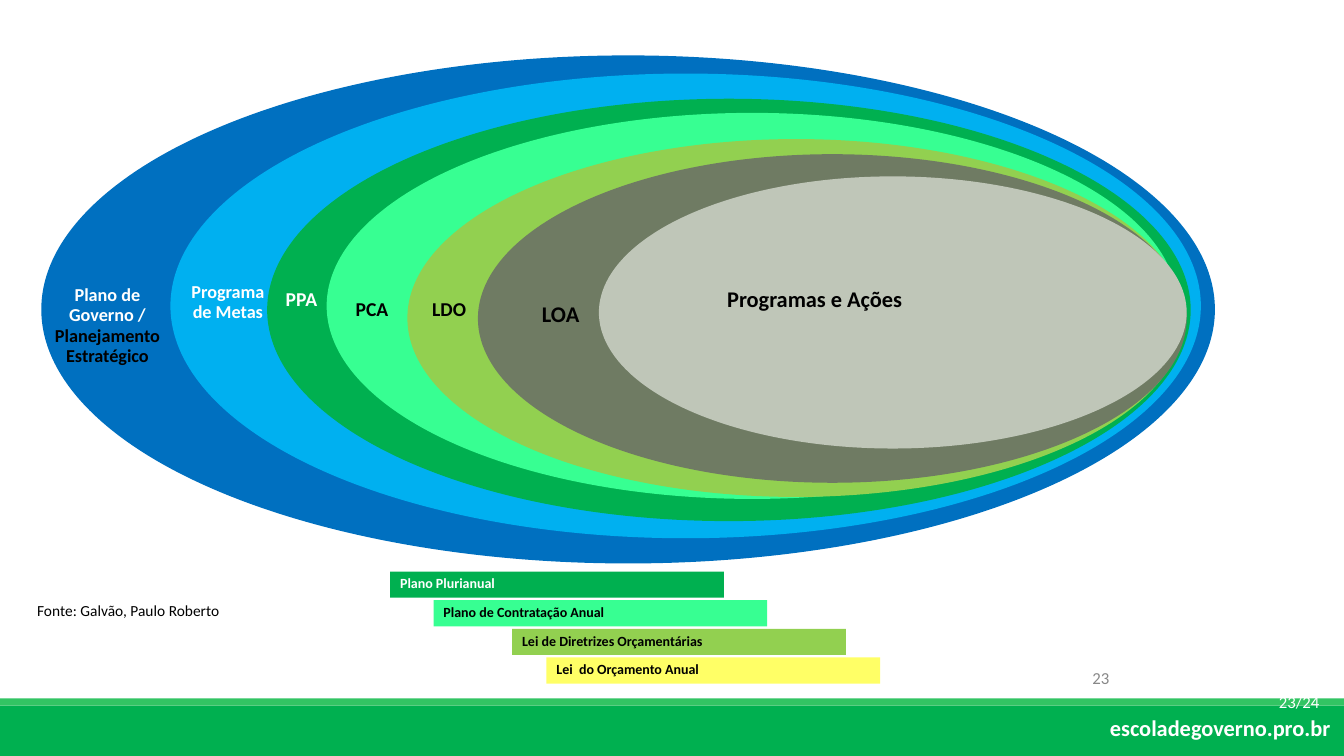
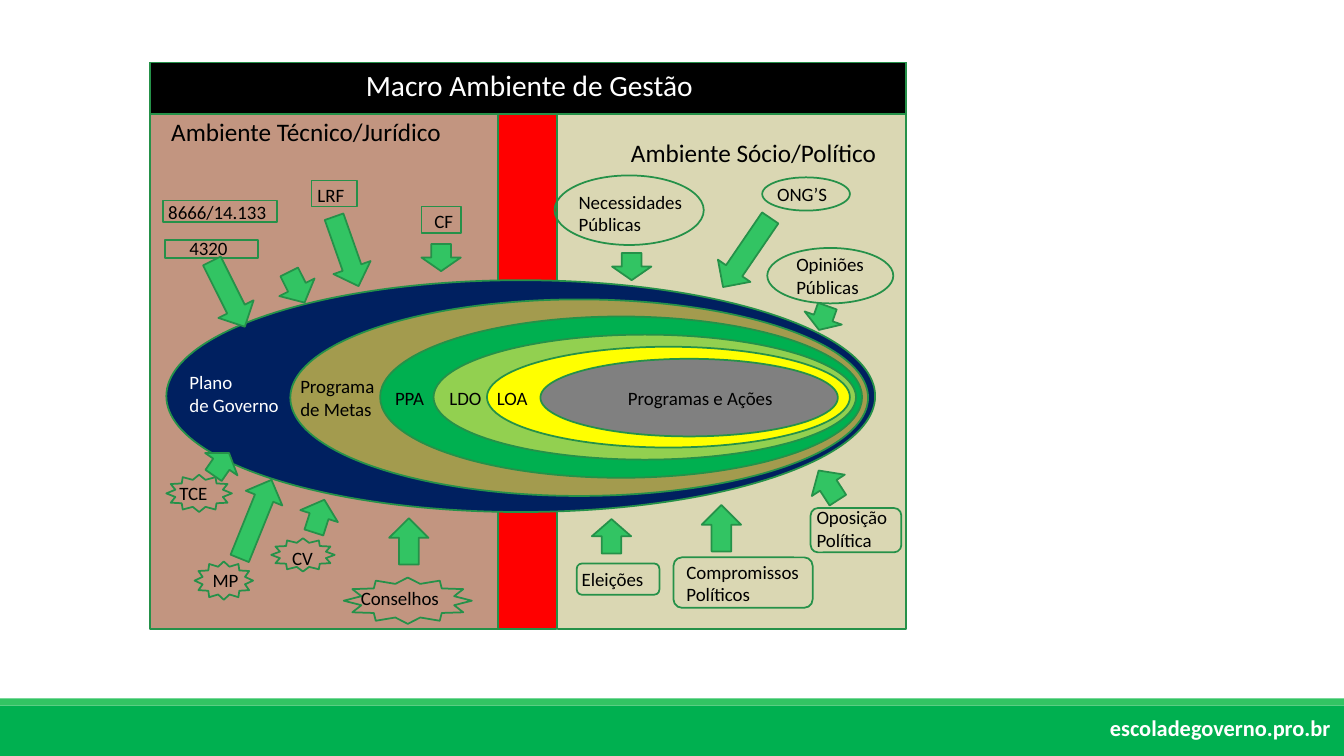
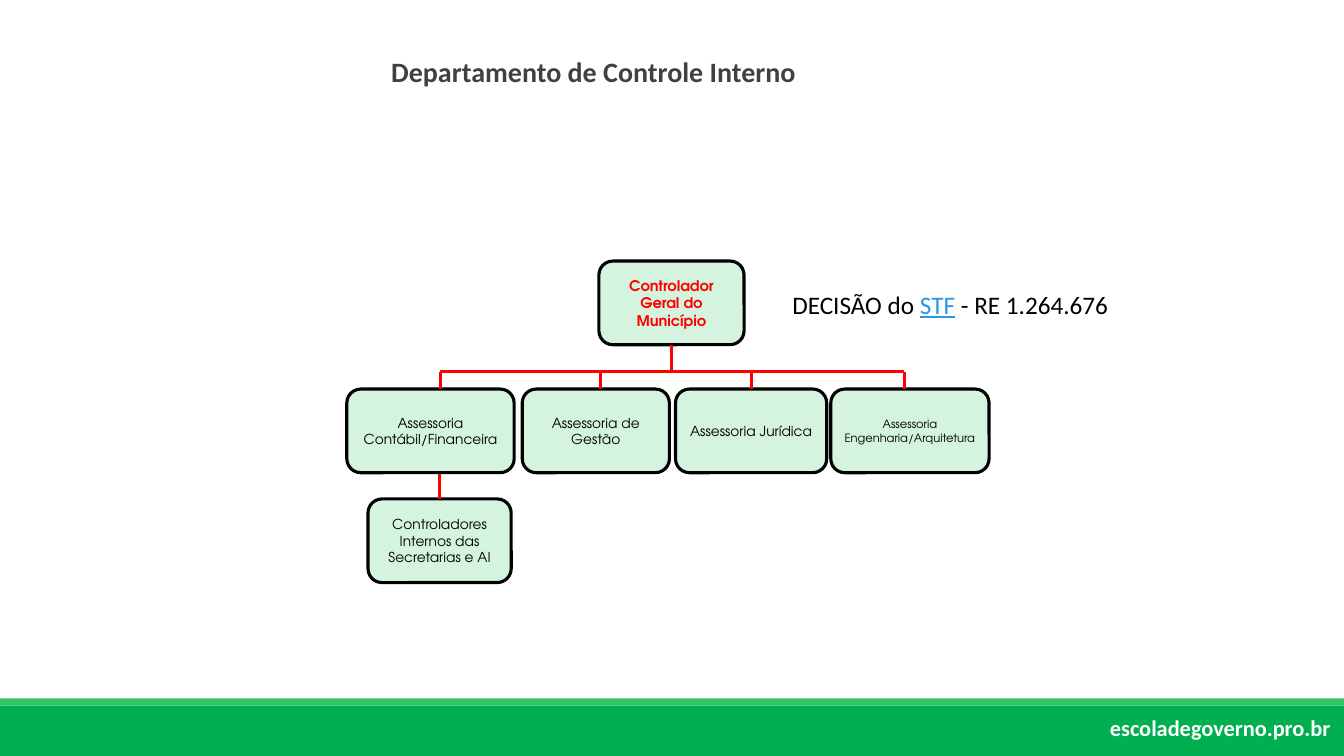
"""Build three slides on municipal planning, its environment and internal control."""
import pptx
import pptx.util
import pptx.dml.color
import pptx.enum.shapes
import pptx.enum.text
import pptx.oxml.ns
import lxml.etree

INK = {
    "white": "FFFFFF", "black": "000000", "gray": "888888", "dark": "404040",
    "green": "00B050", "leaf": "32C463", "edge": "259149", "mint": "37FF92",
    "lime": "92D050", "blue": "0070C0", "sky": "00B0F0", "navy": "002060",
    "moss": "6F7B63", "ash": "BFC6B8", "lemon": "FFFF66", "yellow": "FFFF00",
    "red": "FF0000", "sand": "DAD7B3", "clay": "C29580", "olive": "A39B4E",
    "stone": "808080", "pale": "D5F4DF", "link": "2998E3",
}
COLS, ROWS = 1333, 750
SHAPE = pptx.enum.shapes.MSO_SHAPE
RECT, OVAL, ROUND = SHAPE.RECTANGLE, SHAPE.OVAL, SHAPE.ROUNDED_RECTANGLE
STAR, ARROW = SHAPE.STAR_12_POINT, SHAPE.DOWN_ARROW
LEFT, MID = pptx.enum.text.PP_ALIGN.LEFT, pptx.enum.text.PP_ALIGN.CENTER
TOP, CORE = pptx.enum.text.MSO_ANCHOR.TOP, pptx.enum.text.MSO_ANCHOR.MIDDLE

deck = pptx.Presentation()
deck.slide_width = pptx.util.Inches(13.33)
deck.slide_height = pptx.util.Inches(7.5)
COL, ROW = deck.slide_width / COLS, deck.slide_height / ROWS


def put(slide, text, box, kind=None, fill=None, edge=None, thick=1.25, turn=0,
        size=13.5, tint="black", bold=False, font="Calibri", align=LEFT,
        anchor=TOP, space=None, pad=(10, 5)):
    """Place a shape, text box or title; "|" parts the runs of a list of tints."""
    x, y, w, h = box
    place = [int(n) for n in (x * COL, y * ROW, w * COL, h * ROW)]
    if kind == "title":
        shape = slide.shapes.title
        shape.left, shape.top, shape.width, shape.height = place
    elif kind is None:
        shape = slide.shapes.add_textbox(*place)
    else:
        shape = slide.shapes.add_shape(kind, *place)
        shape.shadow.inherit = False
        shape.rotation = turn
        if fill:
            shape.fill.solid()
            shape.fill.fore_color.rgb = pptx.dml.color.RGBColor.from_string(INK[fill])
        else:
            shape.fill.background()
        if edge:
            shape.line.color.rgb = pptx.dml.color.RGBColor.from_string(INK[edge])
            shape.line.width = pptx.util.Pt(thick)
        else:
            shape.line.fill.background()
    if not text:
        return shape
    frame = shape.text_frame
    frame.word_wrap = True
    frame.vertical_anchor = anchor
    frame.margin_left = frame.margin_right = int(pad[0] * COL)
    frame.margin_top = frame.margin_bottom = int(pad[1] * ROW)
    tints = tint if isinstance(tint, list) else [tint]
    for i, line in enumerate(text.split("\n")):
        para = frame.add_paragraph() if i else frame.paragraphs[0]
        para.alignment = align
        if space:
            para.line_spacing = space
        for j, part in enumerate(line.split("|")):
            run = para.add_run()
            run.text = part
            run.font.name, run.font.size = font, pptx.util.Pt(size)
            run.font.bold = bold
            run.font.color.rgb = pptx.dml.color.RGBColor.from_string(INK[tints[j % len(tints)]])
    return shape


def join(slide, x1, y1, x2, y2, start=None, end=None):
    """Draw a red line, glued to the bottom of start or the top of end."""
    line = slide.shapes.add_connector(
        pptx.enum.shapes.MSO_CONNECTOR.STRAIGHT,
        int(x1 * COL), int(y1 * ROW), int(x2 * COL), int(y2 * ROW))
    if start:
        line.begin_connect(start, 2)
    if end:
        line.end_connect(end, 0)
    line.line.color.rgb = pptx.dml.color.RGBColor.from_string(INK["red"])
    line.line.width = pptx.util.Pt(2.25)
    lxml.etree.SubElement(line.element.spPr, pptx.oxml.ns.qn("a:effectLst"))


plans, scene, chart = [deck.slides.add_slide(deck.slide_layouts[n]) for n in (6, 6, 5)]

bands = [
    put(plans, "", (0, 700, COLS, 50), RECT, "green"),
    put(plans, "", (0, 693, COLS, 7), RECT, "leaf"),
    put(plans, "escoladegoverno.pro.br", (1091, 704, 242, 37), size=16, tint="white", bold=True),
]
for band in bands:
    deck.slide_master.shapes.element.append(band.element)

put(plans, "23", (942, 652, 300, 40), size=12, tint="gray", align=MID, anchor=CORE)
put(plans, "23/24", (1244, 669, 89, 55), size=12, tint="white", align=MID, anchor=CORE)
put(plans, "Fonte: Galvão, Paulo Roberto", (27, 593, 220, 28), size=11, space=0.93)

for box, fill, text, spot, size, tint in [
    ((41, 55, 1164, 504), "blue", "Plano de Governo / |Planejamento Estratégico",
     (32, 278, 149, 92), 13, ["white", "black"]),
    ((169, 73, 1022, 461), "sky", "Programa de Metas", (169, 275, 114, 51), 13, "white"),
    ((265, 98, 916, 419), "green", "PPA", (242, 282, 114, 32), 14, "white"),
    ((324, 112, 844, 383), "mint", "PCA", (308, 292, 122, 29), 14, "black"),
    ((404, 138, 771, 355), "lime", "LDO", (383, 292, 125, 32), 14, "black"),
    ((474, 153, 703, 326), "moss", "LOA", (237, 295, 638, 76), 16, "black"),
    ((594, 175, 583, 270), "ash", "Programas e Ações", (489, 280, 638, 35), 16, "black"),
]:
    put(plans, "", box, OVAL, fill)
    put(plans, text, spot, size=size, tint=tint, bold=True, align=MID, space=0.93)

for i, (x, fill, tint, text) in enumerate([
    (387, "green", "white", "Plano Plurianual"),
    (430, "mint", "black", "Plano de Contratação Anual"),
    (508, "lime", "black", "Lei de Diretrizes Orçamentárias"),
    (542, "lemon", "black", "Lei  do Orçamento Anual"),
]):
    put(plans, text, (x, 567 + 28.4 * i, 331, 26), RECT, fill,
        size=10, tint=tint, bold=True, space=0.93)

for box, fill in [
    ((494, 62, 58, 562), "red"), ((553, 62, 346, 562), "sand"),
    ((149, 62, 345, 562), "clay"), ((149, 62, 750, 51), "black"),
]:
    put(scene, "", box, RECT, fill, "edge")
put(scene, "Macro Ambiente de Gestão", (353, 62, 348, 45), size=21, tint="white")
put(scene, "Ambiente Técnico/Jurídico", (160, 111, 289, 40), size=18)
put(scene, "Ambiente Sócio/Político", (616, 131, 283, 40), size=18)

for kind, box, fill, text, x, y, w, tint in [
    (OVAL, (165, 278, 703, 230), "navy", "Plano\nde Governo", 178, 363, 142, "white"),
    (OVAL, (288, 297, 573, 195), "olive", "Programa\nde Metas", 288, 367, 165, "black"),
    (OVAL, (377, 314, 478, 160), "green", "PPA", 382, 379, 83, "black"),
    (OVAL, (430, 332, 419, 124), "lime", "LDO", 436, 379, 77, "black"),
    (OVAL, (483, 344, 360, 100), "yellow", "LOA", 483, 379, 112, "black"),
    (OVAL, (536, 356, 295, 77), "stone", "Programas e Ações", 613, 379, 183, "black"),
    (RECT, (418, 205, 39, 26), None, "CF", 421, 203, 59, "black"),
    (RECT, (309, 179, 45, 26), None, "LRF", 305, 177, 101, "black"),
    (RECT, (164, 238, 92, 18), None, "4320", 178, 230, 124, "black"),
    (RECT, (162, 199, 113, 21), None, "8666/14.133", 157, 194, 139, "black"),
    (STAR, (269, 534, 63, 33), None, "CV", 280, 537, 71, "black"),
    (STAR, (165, 471, 65, 37), None, "TCE", 168, 473, 102, "black"),
    (STAR, (193, 557, 58, 38), None, "MP", 201, 559, 62, "black"),
    (STAR, (341, 573, 127, 46), None, "Conselhos", 348, 577, 118, "black"),
    (OVAL, (550, 174, 148, 69), None, "Necessidades\nPúblicas", 564, 184, 139, "black"),
    (OVAL, (761, 246, 125, 55), None, "Opiniões\nPúblicas", 780, 246, 104, "black"),
    (OVAL, (756, 176, 87, 33), None, "ONG’S", 761, 176, 83, "black"),
    (ROUND, (804, 504, 90, 44), None, "Oposição\nPolítica", 800, 497, 128, "black"),
    (ROUND, (668, 553, 138, 50), None, "Compromissos\nPolíticos", 671, 551, 165, "black"),
    (ROUND, (572, 559, 82, 31), None, "Eleições", 567, 558, 142, "black"),
]:
    put(scene, "", box, kind, fill, "edge")
    put(scene, text, (x, y, w, 33 + 23 * text.count("\n")), tint=tint)

for x, y, h, turn in [
    (797, 303, 25, 19.5), (721, 209, 83, 34.3), (607, 251, 27, 0), (418, 242, 27, 0),
    (275, 268, 34, 333.4), (207, 255, 73, 333.4), (324, 213, 73, 340.6),
    (297, 495, 34, 197.7), (200, 447, 27, 214.6), (234, 473, 84, 202),
    (386, 514, 46, 180), (587, 515, 34, 180), (802, 464, 35, 147.1), (696, 501, 46, 180),
]:
    put(scene, "", (x, y, 39, h), ARROW, "leaf", "edge", turn=turn)

put(chart, "Departamento de Controle Interno", (388, 53, 552, 59), "title",
    size=20, tint="dark", bold=True, space=0.9, pad=(0, 5))
cards = []
for text, x, y, w, size, tint in [
    ("Controlador Geral do Município", 594, 259, 144, 10.5, "red"),
    ("Assessoria Contábil/Financeira", 344, 386, 166, 9.8, "black"),
    ("Assessoria de Gestão", 518, 386, 146, 9.8, "black"),
    ("Assessoria Jurídica", 670, 386, 150, 9.8, "black"),
    ("Assessoria Engenharia/Arquitetura", 824, 386, 157, 8.2, "black"),
    ("Controladores Internos das Secretarias e AI", 365, 495, 142, 9.8, "black"),
]:
    cards.append(put(chart, text, (x, y, w, 83), ROUND, "pale", "black", 2.25, size=size,
                     tint=tint, bold=tint == "red", font="TeX Gyre Adventor",
                     align=MID, anchor=CORE, pad=(7, 4)))
head, law, staff = cards[0], cards[3], cards[5]
join(chart, 436, 369, 897, 369)
join(chart, 666, 342, 666, 369, start=head)
for x, card in [(437, None), (596, None), (745, law), (897, None)]:
    join(chart, x, 369, x, 386, end=card)
join(chart, 436, 470, 436, 495, end=staff)

note = put(chart, "DECISÃO do |STF| - RE 1.264.676", (776, 282, 353, 34),
           size=18, tint=["black", "link", "black"])
note.text_frame.paragraphs[0].runs[1].font.underline = True

deck.save("out.pptx")
